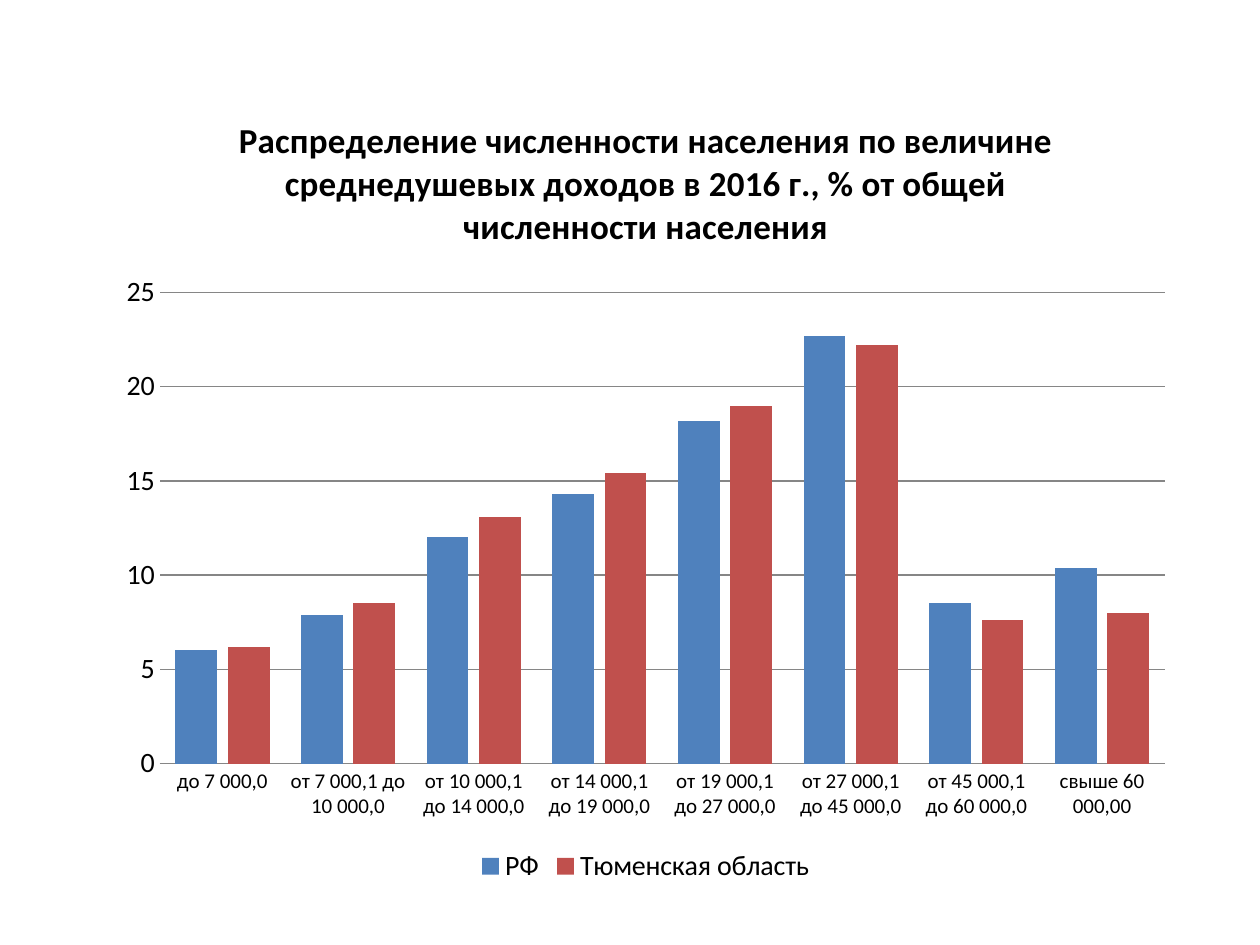
import pptx
import pptx.chart.data
import pptx.dml.color
import pptx.enum.chart
import pptx.util

Pt = pptx.util.Pt
COLORS = {"text": "000000", "grid": "868686", "РФ": "4F81BD", "Тюменская область": "C0504D"}
TITLE = ("Распределение численности населения по величине "
         "среднедушевых доходов в 2016 г., % от общей численности населения")
INCOME_BANDS = [
    "до 7 000,0", "от 7 000,1 до 10 000,0", "от 10 000,1 до 14 000,0",
    "от 14 000,1 до 19 000,0", "от 19 000,1 до 27 000,0",
    "от 27 000,1 до 45 000,0", "от 45 000,1 до 60 000,0", "свыше 60 000,00",
]
SHARES = {
    "РФ": [6, 7.9, 12, 14.3, 18.2, 22.7, 8.5, 10.4],
    "Тюменская область": [6.2, 8.5, 13.1, 15.4, 19, 22.2, 7.6, 8],
}


def rgb(name):
    return pptx.dml.color.RGBColor.from_string(COLORS[name])


def set_font(font, size, bold=False):
    font.name = "Calibri"
    font.size = Pt(size)
    font.bold = bold
    font.color.rgb = rgb("text")


def add_income_chart(s, left, top, width, height):
    data = pptx.chart.data.CategoryChartData()
    data.categories = INCOME_BANDS
    for name, values in SHARES.items():
        data.add_series(name, values)
    chart = s.shapes.add_chart(
        pptx.enum.chart.XL_CHART_TYPE.COLUMN_CLUSTERED,
        Pt(left), Pt(top), Pt(width), Pt(height), data).chart
    set_font(chart.font, 16)

    # Title
    chart.has_title = True
    tf = chart.chart_title.text_frame
    tf.text = TITLE
    set_font(tf.paragraphs[0].font, 20, bold=True)
    chart.chart_title.include_in_layout = False

    # Columns
    plot = chart.plots[0]
    plot.gap_width = 75
    plot.overlap = -25
    plot.vary_by_categories = False
    for series in plot.series:
        series.format.fill.solid()
        series.format.fill.fore_color.rgb = rgb(series.name)

    # Axes
    for axis, size in ((chart.category_axis, 12), (chart.value_axis, 16)):
        axis.major_tick_mark = pptx.enum.chart.XL_TICK_MARK.NONE
        axis.minor_tick_mark = pptx.enum.chart.XL_TICK_MARK.NONE
        set_font(axis.tick_labels.font, size)
    chart.category_axis.format.line.color.rgb = rgb("grid")
    axis = chart.value_axis
    axis.minimum_scale, axis.maximum_scale, axis.major_unit = 0, 25, 5
    axis.format.line.fill.background()
    axis.has_major_gridlines = True
    axis.major_gridlines.format.line.color.rgb = rgb("grid")

    # Legend
    chart.has_legend = True
    chart.legend.position = pptx.enum.chart.XL_LEGEND_POSITION.BOTTOM
    chart.legend.include_in_layout = False
    set_font(chart.legend.font, 16)


def main():
    prs = pptx.Presentation()
    prs.slide_width, prs.slide_height = Pt(720), Pt(540)
    s = prs.slides.add_slide(prs.slide_layouts[6])
    add_income_chart(s, 60, 49, 618, 459)
    prs.save("out.pptx")


if __name__ == "__main__":
    main()
